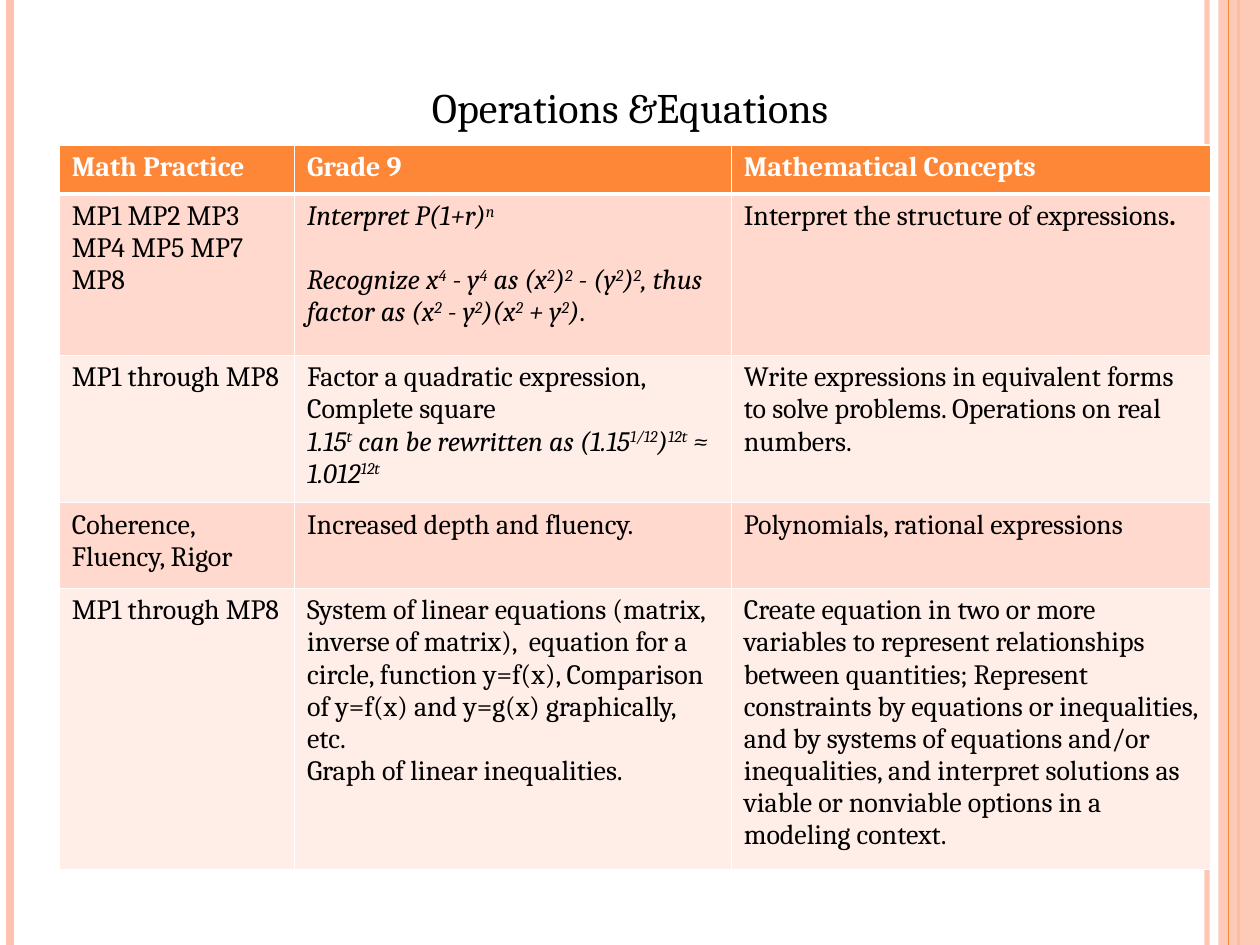
from dataclasses import dataclass

from lxml import etree
from pptx import Presentation, util as u
from pptx.dml.color import RGBColor
from pptx.enum import shapes, text
from pptx.oxml.ns import qn


@dataclass(frozen=True)
class Theme:
    font: str = "Cambria"
    main: str = "FE8637"
    soft: str = "FEC3AE"
    bands: tuple = ("FFD9CE", "FFEDE8")
    dark: str = "000000"
    light: str = "FFFFFF"
    title: int = 24
    body: int = 16
    gap: float = 18.4


T = Theme()

# Text between carets is raised; each paragraph is a list of (text, style)
HEADS = ["Math Practice", "Grade 9", "Mathematical Concepts"]
ROWS = [
    [
        [[("MP1 MP2 MP3 MP4 MP5 MP7 MP8", "")]],
        [
            [("Interpret P(1+r)^n^", "i")],
            [("Recognize x^4^ - y^4^ as (x^2^)^2^ - (y^2^)^2^, thus factor as "
              "(x^2^ - y^2^)(x^2^ + y^2^)", "i"), (".", "")],
        ],
        [[("Interpret the structure of expressions", ""), (".", "b")]],
    ],
    [
        [[("MP1 through MP8", "")]],
        [
            [("Factor a quadratic expression,", "")],
            [("Complete square", "")],
            [("1.15^t^ can be rewritten as (1.15^1/12^)^12t^ ≈ 1.012^12t^", "i")],
        ],
        [[("Write expressions in equivalent forms to solve problems. "
           "Operations on real numbers.", "")]],
    ],
    [
        [[("Coherence, Fluency, Rigor", "")]],
        [[("Increased depth and fluency.", "")]],
        [[("Polynomials, rational expressions", "")]],
    ],
    [
        [[("MP1 through MP8", "")]],
        [
            [("System of linear equations (matrix, inverse of matrix),  equation "
              "for a circle, function y=f(x), Comparison of y=f(x) and y=g(x) "
              "graphically, etc.", "")],
            [("Graph of linear inequalities.", "")],
        ],
        [[("Create equation in two or more variables to represent relationships "
           "between quantities; Represent constraints by equations or "
           "inequalities, and by systems of equations and/or inequalities, and "
           "interpret solutions as viable or nonviable options in a modeling "
           "context.", "")]],
    ],
]
SPACED = (0, 1)  # body cell whose paragraphs stand one line apart
WIDTHS = [1.87, 3.47, 3.81]
HEIGHTS = [0.39, 1.28, 1.17, 0.68, 2.23]


def rgb(code):
    return RGBColor.from_string(code)


def fade(part, pct):
    """Set the opacity of the first colour in a shape."""
    tone = next(part._element.iter(qn("a:srgbClr")))
    etree.SubElement(tone, qn("a:alpha")).set("val", str(pct * 1000))


def add_run(para, words, size, color, style="", raised=False):
    run = para.add_run()
    run.text = words
    font = run.font
    font.name, font.size = T.font, u.Pt(size)
    font.color.rgb = rgb(color)
    font.bold, font.italic = "b" in style, "i" in style
    if raised:
        run._r.get_or_add_rPr().set("baseline", "30000")


def add_line(slide, x, top, high, color, width, pct=100):
    line = slide.shapes.add_connector(
        shapes.MSO_CONNECTOR.STRAIGHT,
        u.Inches(x), u.Inches(top), u.Inches(x), u.Inches(top + high))
    line.line.color.rgb = rgb(color)
    line.line.width = u.Pt(width)
    etree.SubElement(line._element.spPr, qn("a:effectLst"))
    if pct < 100:
        fade(line, pct)


def add_edges(slide, left, top, wide, high):
    """Stripes down both sides of the page."""
    right = left + wide
    add_line(slide, right - 0.42, top, high, T.soft, 3, 93)
    add_line(slide, left + 0.08, top, high, T.soft, 4.5)
    add_line(slide, right - 0.17, top, high, T.main, 1.5)
    band = slide.shapes.add_shape(
        shapes.MSO_SHAPE.RECTANGLE, u.Inches(right - 0.33), u.Inches(top),
        u.Inches(0.33), u.Inches(high))
    band.shadow.inherit = False
    band.fill.solid()
    band.fill.fore_color.rgb = rgb(T.soft)
    band.line.fill.background()
    fade(band, 87)
    add_line(slide, right - 0.25, top, high, T.main, 0.75)


def add_title(slide, words, left, top, wide, high):
    title = slide.shapes.title
    title.left, title.top = u.Inches(left), u.Inches(top)
    title.width, title.height = u.Inches(wide), u.Inches(high)
    frame = title.text_frame
    frame.word_wrap = True
    frame.vertical_anchor = text.MSO_ANCHOR.MIDDLE
    para = frame.paragraphs[0]
    para.alignment = text.PP_ALIGN.CENTER
    add_run(para, words, T.title, T.dark)


def style_cell(cell, fill, top, base):
    """Draw white borders, then the fill."""
    props = cell._tc.get_or_add_tcPr()
    for side, width in (("L", 1), ("R", 1), ("T", top), ("B", base)):
        edge = etree.SubElement(props, qn("a:ln" + side))
        edge.set("w", str(u.Pt(width)))
        paint = etree.SubElement(edge, qn("a:solidFill"))
        etree.SubElement(paint, qn("a:srgbClr")).set("val", T.light)
    cell.fill.solid()
    cell.fill.fore_color.rgb = rgb(fill)


def fill_cell(cell, paras, color, gap=0):
    frame = cell.text_frame
    for i, parts in enumerate(paras):
        para = frame.add_paragraph() if i else frame.paragraphs[0]
        if i and gap:
            para.space_before = u.Pt(gap)
        for words, style in parts:
            for j, piece in enumerate(words.split("^")):
                if piece:
                    add_run(para, piece, T.body, color, style, j % 2 == 1)


def add_grid(slide, left, top, wide, high):
    """Table of practices, grade work and concepts."""
    table = slide.shapes.add_table(
        len(HEIGHTS), len(WIDTHS), u.Inches(left), u.Inches(top),
        u.Inches(wide), u.Inches(high)).table
    for col, size in zip(table.columns, WIDTHS):
        col.width = u.Inches(wide * size / sum(WIDTHS))
    for row, size in zip(table.rows, HEIGHTS):
        row.height = u.Inches(high * size / sum(HEIGHTS))
    # Header row
    for c, head in enumerate(HEADS):
        cell = table.cell(0, c)
        style_cell(cell, T.main, 1, 3)
        fill_cell(cell, [[(head, "b")]], T.light)
    # Banded body rows
    for r, row in enumerate(ROWS):
        for c, paras in enumerate(row):
            cell = table.cell(r + 1, c)
            style_cell(cell, T.bands[r % 2], 1 if r else 3, 1)
            fill_cell(cell, paras, T.dark, T.gap if (r, c) == SPACED else 0)


def main():
    deck = Presentation()
    deck.slide_width, deck.slide_height = u.Inches(10), u.Inches(7.5)
    slide = deck.slides.add_slide(deck.slide_layouts[5])
    add_edges(slide, 0, 0, 10, 7.5)
    add_title(slide, "Operations &Equations", 1, 0.55, 8, 0.6)
    add_grid(slide, 0.47, 1.15, 9.14, 5.75)
    deck.save("out.pptx")


if __name__ == "__main__":
    main()
